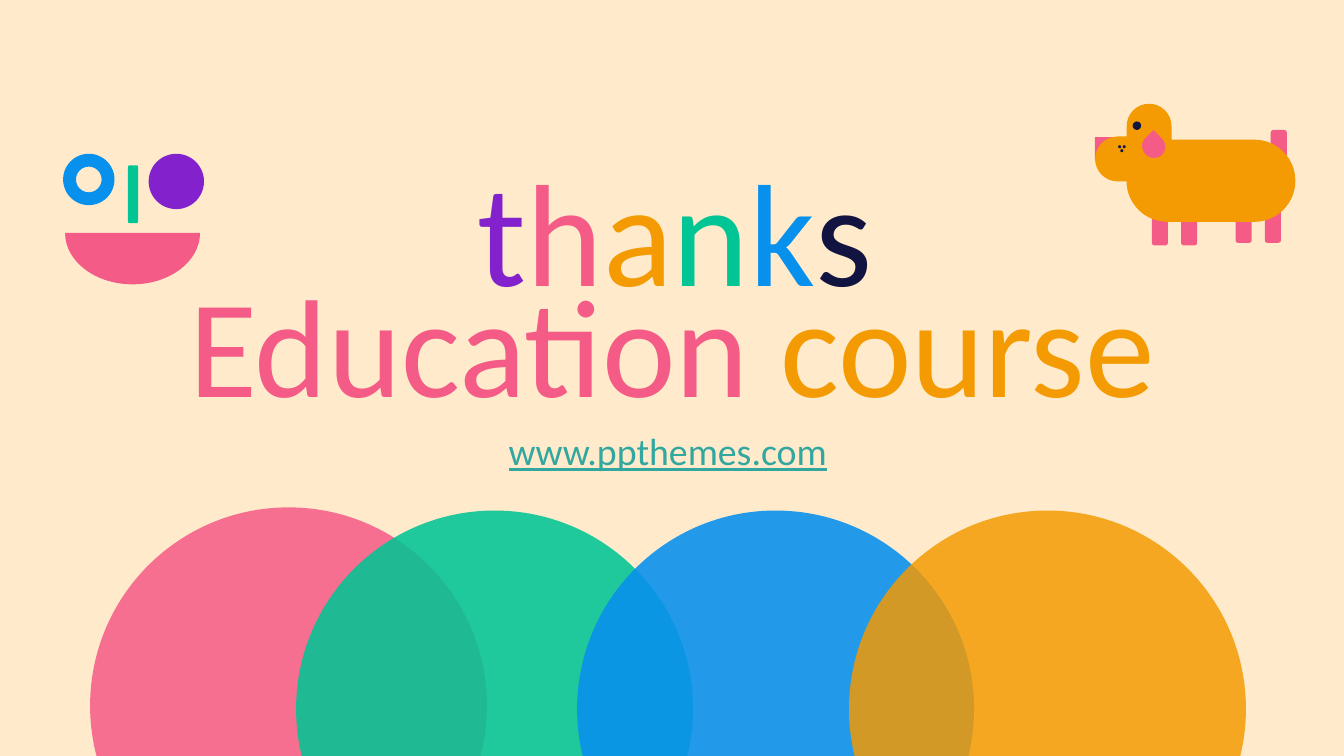
"""Build the closing slide of an education course with python-pptx."""
import itertools
import math
from dataclasses import dataclass
from typing import Any

import lxml.etree
import pptx
import pptx.dml.color
import pptx.enum.shapes
import pptx.enum.text
import pptx.oxml.ns
import pptx.util

Cm = pptx.util.Cm
qn = pptx.oxml.ns.qn
KIND = pptx.enum.shapes.MSO_SHAPE
Steps = list[tuple[tuple[float, float], ...]]


@dataclass(frozen=True)
class Theme:
    font: str = "Calibri"
    title: int = 208
    subtitle: int = 199
    link: int = 54
    paper: str = "FFEBCB"
    pink: str = "F55B87"
    orange: str = "F49A02"
    green: str = "02C595"
    blue: str = "0890ED"
    purple: str = "8322CC"
    navy: str = "111340"
    teal: str = "32A79F"
    grey: str = "747A94"


@dataclass(frozen=True)
class Part:
    kind: Any
    color: str
    left: float
    top: float
    width: float
    height: float
    rotation: float = 0


@dataclass(frozen=True)
class Run:
    text: str
    color: str
    underline: bool = False


@dataclass(frozen=True)
class Line:
    runs: list[Run]
    size: int
    left: float
    top: float
    width: float
    height: float


@dataclass(frozen=True)
class Disc:
    color: str
    opacity: int
    x: float
    y: float


THEME = Theme()
WIDTH, HEIGHT = 67.72, 38.1
RADIUS, DROP = 10, 2.52

BACKGROUND = Part(KIND.RECTANGLE, THEME.paper, 0, 0, WIDTH, HEIGHT)

LINES = [
    Line([Run(c, color) for c, color in zip("thanks", (
        THEME.purple, THEME.pink, THEME.orange, THEME.green, THEME.blue, THEME.navy))],
        THEME.title, 11.89, 6.99, 44.27, 9.14),
    Line([Run("Education ", THEME.pink), Run("course", THEME.orange)],
         THEME.subtitle, 8.2, 12.9, 51.31, 8.76),
]
LINK = Line([Run("www.ppthemes.com", THEME.teal, True), Run(" ", THEME.grey)],
            THEME.link, 20.96, 21.44, 25.81, 2.57)

TAIL_AND_LEGS = [
    Part(KIND.ROUNDED_RECTANGLE, THEME.pink, x, y, 0.81, 2.18)
    for x, y in ((64.03, 6.55), (58.04, 10.19), (59.51, 10.19), (62.26, 10.06), (63.73, 10.06))
]
TONGUE = Part(KIND.RIGHT_TRIANGLE, THEME.pink, 55.17, 6.91, 1.19, 1.19, 90)
EAR = Part(KIND.TEAR, THEME.pink, 57.56, 6.78, 1.14, 1.19, 315)
EYE_AND_FRECKLES = [
    Part(KIND.OVAL, THEME.navy, x, y, d, d)
    for x, y, d in ((57.07, 6.12, 0.43), (56.34, 7.32, 0.15), (56.57, 7.32, 0.15), (56.45, 7.52, 0.15))
]
FACE = [
    Part(KIND.DONUT, THEME.blue, 3.18, 7.75, 2.59, 2.59),
    Part(KIND.OVAL, THEME.purple, 7.49, 7.75, 2.79, 2.79),
    Part(KIND.ROUNDED_RECTANGLE, THEME.green, 6.45, 8.33, 0.51, 2.92),
]
DISCS = [
    Disc(THEME.pink, 86, 14.54, 35.57),
    Disc(THEME.green, 88, 24.92, 35.73),
    Disc(THEME.blue, 89, 39.08, 35.73),
    Disc(THEME.orange, 84, 52.78, 35.73),
]


def arc(x: float, y: float, rx: float, ry: float, *stops: float) -> Steps:
    """Return a start point and one Bezier curve between each two angles."""
    def at(angle: float, push: float = 0) -> tuple[float, float]:
        """Return a point on the ellipse, pushed along its tangent."""
        c, s = math.cos(angle), math.sin(angle)
        return x + rx * (c - push * s), y + ry * (s + push * c)

    angles = [math.radians(stop) for stop in stops]
    steps: Steps = [(at(angles[0]),)]
    for a, b in itertools.pairwise(angles):
        push = 4 / 3 * math.tan((b - a) / 4)
        steps.append((at(a, push), at(b, -push), at(b)))
    return steps


def paint(s: Any, color: str, opacity: int = 100) -> None:
    """Give a shape a plain fill without outline or shadow."""
    s.shadow.inherit = False
    s.line.fill.background()
    s.fill.solid()
    s.fill.fore_color.rgb = pptx.dml.color.RGBColor.from_string(color)
    if opacity < 100:
        clr = s._element.spPr.find(qn("a:solidFill")).find(qn("a:srgbClr"))
        lxml.etree.SubElement(clr, qn("a:alpha")).set("val", str(opacity * 1000))


def draw_part(shapes: Any, part: Part) -> None:
    """Draw one preset shape."""
    s = shapes.add_shape(part.kind, Cm(part.left), Cm(part.top), Cm(part.width), Cm(part.height))
    s.rotation = part.rotation
    paint(s, part.color)


def draw_outline(shapes: Any, steps: Steps, color: str, opacity: int = 100) -> None:
    """Draw one closed freeform of lines and curves."""
    first, *rest = [(Cm(x), Cm(y)) for x, y in (step[-1] for step in steps)]
    builder = shapes.build_freeform(*first)
    builder.add_line_segments(rest, close=True)
    s = builder.convert_to_shape()
    left, top = s.left, s.top
    for segment, step in zip(list(s._element.iter(qn("a:lnTo"))), steps[1:]):
        if len(step) == 3:
            curve = lxml.etree.Element(qn("a:cubicBezTo"))
            for x, y in step:
                pt = lxml.etree.SubElement(curve, qn("a:pt"))
                pt.set("x", str(Cm(x) - left))
                pt.set("y", str(Cm(y) - top))
            segment.getparent().replace(segment, curve)
    paint(s, color, opacity)


def draw_line(shapes: Any, line: Line) -> None:
    """Draw one centred line of coloured runs."""
    s = shapes.add_textbox(Cm(line.left), Cm(line.top), Cm(line.width), Cm(line.height))
    tf = s.text_frame
    tf.word_wrap = True
    tf.auto_size = pptx.enum.text.MSO_AUTO_SIZE.SHAPE_TO_FIT_TEXT
    p = tf.paragraphs[0]
    p.alignment = pptx.enum.text.PP_ALIGN.CENTER
    for run in line.runs:
        r = p.add_run()
        r.text = run.text
        fmt = {"name": THEME.font, "size": pptx.util.Pt(line.size), "underline": run.underline}
        for name, value in fmt.items():
            setattr(r.font, name, value)
        r.font.color.rgb = pptx.dml.color.RGBColor.from_string(run.color)


def draw_dog(shapes: Any) -> None:
    """Draw the dog as one group."""
    dog = shapes.add_group_shape().shapes
    for part in [*TAIL_AND_LEGS, TONGUE]:
        draw_part(dog, part)
    head = arc(57.9, 6.36, 1.13, 1.13, 180, 270, 360)
    rump = arc(63.2, 9.11, 2.07, 2.07, -90, 0, 90)
    chest = arc(58.83, 9.11, 2.07, 2.07, 90, 180)
    muzzle = arc(56.31, 8.01, 1.13, 1.13, 90, 180, 270)
    body = [*head, ((59.03, 7.04),), *rump, *chest, ((56.77, 9.14),), *muzzle, ((56.77, 6.88),)]
    draw_outline(dog, body, THEME.orange)
    for part in [EAR, *EYE_AND_FRECKLES]:
        draw_part(dog, part)


def draw_face(shapes: Any) -> None:
    """Draw the smiling face as one group."""
    face = shapes.add_group_shape().shapes
    draw_outline(face, arc(6.68, 11.74, 3.4, 2.59, 0, 90, 180), THEME.pink)
    for part in FACE:
        draw_part(face, part)


def main() -> None:
    """Build and save the slide."""
    prs = pptx.Presentation()
    prs.slide_width, prs.slide_height = Cm(WIDTH), Cm(HEIGHT)
    shapes = prs.slides.add_slide(prs.slide_layouts[6]).shapes
    draw_part(shapes, BACKGROUND)
    for line in LINES:
        draw_line(shapes, line)
    draw_dog(shapes)
    draw_line(shapes, LINK)
    draw_face(shapes)
    cut = math.degrees(math.asin(DROP / RADIUS))
    for disc in DISCS:
        rim = arc(disc.x, disc.y, RADIUS, RADIUS, 180 - cut, 180, 270, 360, 360 + cut)
        draw_outline(shapes, rim, disc.color, disc.opacity)
    prs.save("out.pptx")


if __name__ == "__main__":
    main()
